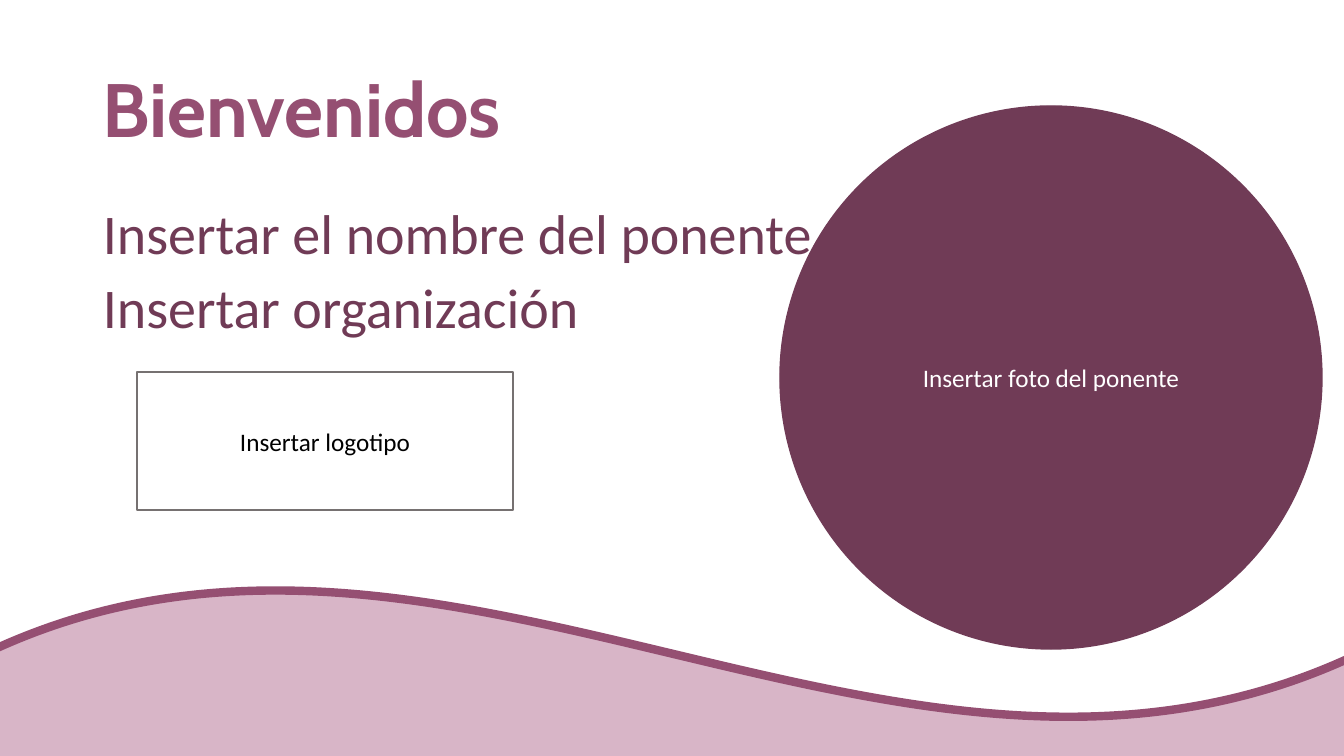
import pptx
import pptx.util
import pptx.dml.color
import pptx.enum.shapes
import pptx.enum.text
from dataclasses import dataclass

PX = 914400 / 100.8
SHAPE = pptx.enum.shapes.MSO_SHAPE
ALIGN = pptx.enum.text.PP_ALIGN
ANCHOR = pptx.enum.text.MSO_ANCHOR


@dataclass(frozen=True)
class Theme:
    plum: str = "703B56"
    mauve: str = "954F72"
    pink: str = "D8B5C7"
    gray: str = "767171"
    white: str = "FFFFFF"
    black: str = "000000"
    head: str = "Cabin"
    body: str = "Calibri"
    title: int = 54
    lead: int = 40
    label: int = 18


theme = Theme()
color = pptx.dml.color.RGBColor.from_string


def place(box):
    """Turn a box in px into EMU."""
    return [round(n * PX) for n in box]


def write(shape, lines, face, size, ink, anchor, align, bold=False):
    frame = shape.text_frame
    frame.word_wrap = True
    frame.vertical_anchor = anchor
    frame.text = "\n".join(lines)
    for line in frame.paragraphs:
        line.alignment = align
        line.font.name = face
        line.font.size = pptx.util.Pt(size)
        line.font.bold = bold
        line.font.color.rgb = color(ink)


deck = pptx.Presentation()
deck.slide_width, deck.slide_height = place((1344, 756))
slide = deck.slides.add_slide(deck.slide_layouts[6])
shapes = slide.shapes

# Wave, photo and logo: kind, box, fill, line, line width, label, label color
forms = [
    (SHAPE.WAVE, (-15, 588, 1374, 525), theme.pink, theme.mauve, 6, "", theme.white),
    (SHAPE.OVAL, (780, 106, 542, 543), theme.plum, theme.plum, 1,
     "Insertar foto del ponente", theme.white),
    (SHAPE.RECTANGLE, (137, 372, 376, 138), theme.white, theme.gray, 1,
     "Insertar logotipo", theme.black),
]

# Heading and speaker: lines, box, font, size, color, anchor, bold
texts = [
    (["Bienvenidos"], (93, 40, 1159, 146), theme.head, theme.title,
     theme.mauve, ANCHOR.MIDDLE, True),
    (["Insertar el nombre del ponente", "Insertar organización"],
     (93, 201, 1159, 480), theme.body, theme.lead, theme.plum, ANCHOR.TOP, False),
]

for kind, box, fill, edge, width, label, ink in forms:
    form = shapes.add_shape(kind, *place(box))
    form.shadow.inherit = False
    form.fill.solid()
    form.fill.fore_color.rgb = color(fill)
    form.line.color.rgb = color(edge)
    form.line.width = pptx.util.Pt(width)
    if label:
        write(form, [label], theme.body, theme.label, ink, ANCHOR.MIDDLE, ALIGN.CENTER)
        continue

    # The heading and speaker lie above the wave and below the photo
    for lines, area, face, size, tint, anchor, bold in texts:
        text = shapes.add_textbox(*place(area))
        write(text, lines, face, size, tint, anchor, ALIGN.LEFT, bold)
        for order, line in enumerate(text.text_frame.paragraphs):
            line.line_spacing = 0.9
            if order:
                line.space_before = pptx.util.Pt(10)

deck.save("out.pptx")
